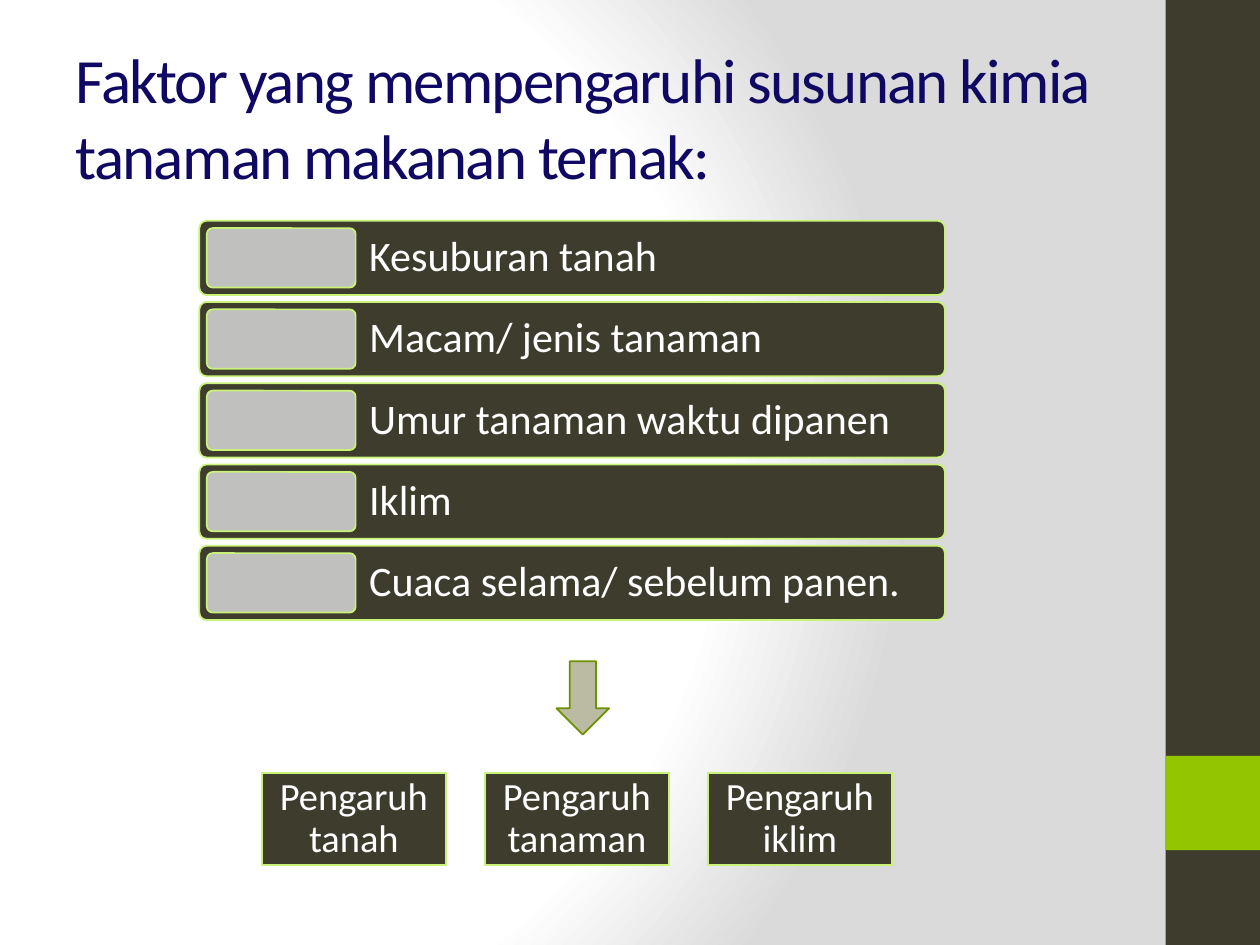
from dataclasses import dataclass

from pptx import Presentation
from pptx.dml.color import RGBColor
from pptx.enum.shapes import MSO_SHAPE
from pptx.enum.text import MSO_ANCHOR, PP_ALIGN
from pptx.oxml import parse_xml
from pptx.oxml.ns import nsdecls
from pptx.util import Cm, Pt

RECT, ROUNDED, DOWN_ARROW = MSO_SHAPE.RECTANGLE, MSO_SHAPE.ROUNDED_RECTANGLE, MSO_SHAPE.DOWN_ARROW
MIDDLE = MSO_ANCHOR.MIDDLE
LEFT, CENTER = PP_ALIGN.LEFT, PP_ALIGN.CENTER
TITLE_ONLY = 5


@dataclass(frozen=True)
class Theme:
    font: str = "Calibri"
    title_size: int = 36
    factor_size: int = 24
    effect_size: int = 22
    title: str = "0F0963"
    dark: str = "3E3D2D"
    accent: str = "94C600"
    outline: str = "CAF278"
    tab: str = "C0C0BE"
    arrow: str = "BBBAA2"
    arrow_line: str = "6D9200"
    text: str = "FFFFFF"
    page: str = "FFFFFF"
    page_edge: str = "DADADA"


THEME = Theme()
TITLE = "Faktor yang mempengaruhi susunan kimia tanaman makanan ternak:"
FACTORS = ["Kesuburan tanah", "Macam/ jenis tanaman", "Umur tanaman waktu dipanen",
           "Iklim", "Cuaca selama/ sebelum panen."]
EFFECTS = ["Pengaruh tanah", "Pengaruh tanaman", "Pengaruh iklim"]


def style_paragraph(p, size, color, align):
    p.alignment = align
    p.font.name = THEME.font
    p.font.size = Pt(size)
    p.font.color.rgb = RGBColor.from_string(color)


def add_block(s, kind, box, fill, line=None):
    """Add a flat preset shape; box is left, top, width, height in cm."""
    sp = s.shapes.add_shape(kind, *(Cm(v) for v in box))
    sp.shadow.inherit = False
    sp.fill.solid()
    sp.fill.fore_color.rgb = RGBColor.from_string(fill)
    if line:
        sp.line.color.rgb = RGBColor.from_string(line)
        sp.line.width = Pt(1)
    else:
        sp.line.fill.background()
    if kind == ROUNDED:
        sp.adjustments[0] = 0.1
    return sp


def write_label(sp, text, size, align, margin, left_margin):
    tf = sp.text_frame
    tf.word_wrap = True
    tf.vertical_anchor = MIDDLE
    tf.margin_top = tf.margin_bottom = tf.margin_right = Cm(margin)
    tf.margin_left = Cm(left_margin)
    p = tf.paragraphs[0]
    p.text = text
    p.line_spacing = 0.9
    style_paragraph(p, size, THEME.text, align)


def set_background(s):
    """Radial gradient, which python-pptx has no public method for."""
    stops = [(0, THEME.page), (75000, THEME.page), (100000, THEME.page_edge)]
    gs = "".join(f'<a:gs pos="{pos}"><a:srgbClr val="{c}"/></a:gs>' for pos, c in stops)
    s._element.cSld.insert(0, parse_xml(
        f'<p:bg {nsdecls("p", "a")}><p:bgPr><a:gradFill rotWithShape="1"><a:gsLst>{gs}</a:gsLst>'
        '<a:path path="circle"><a:fillToRect l="20000" t="50000" r="100000" b="50000"/></a:path>'
        '</a:gradFill><a:effectLst/></p:bgPr></p:bg>'))


def add_sidebar(s, left, top, width, height):
    add_block(s, RECT, (left, top, width, height), THEME.dark)
    add_block(s, RECT, (left, top + 0.8 * height, width, width), THEME.accent)


def set_title(s, left, top, width, height):
    sp = s.shapes.title
    sp.left, sp.top, sp.width, sp.height = Cm(left), Cm(top), Cm(width), Cm(height)
    tf = sp.text_frame
    tf.word_wrap = True
    tf.vertical_anchor = MIDDLE
    p = tf.paragraphs[0]
    r = p.add_run()
    r.text = TITLE
    style_paragraph(p, THEME.title_size, THEME.title, LEFT)
    r.font._element.set("spc", "-100")


def add_factors(s, left, top, width, height):
    """Stack one bar per factor, each with a blank tab at its left."""
    gap, inset, tab_width = 0.14, 0.15, 3
    bar = (height - gap * (len(FACTORS) - 1)) / len(FACTORS)
    for i, factor in enumerate(FACTORS):
        y = top + i * (bar + gap)
        sp = add_block(s, ROUNDED, (left, y, width, bar), THEME.dark, THEME.outline)
        write_label(sp, factor, THEME.factor_size, LEFT, 0.21, tab_width + 0.38)
        add_block(s, ROUNDED, (left + inset, y + inset, tab_width, bar - 2 * inset),
                  THEME.tab, THEME.outline)


def add_effects(s, left, top, width, height):
    """Spread the effect boxes evenly over the width."""
    box = 3.71
    step = (width - box) / (len(EFFECTS) - 1)
    for i, effect in enumerate(EFFECTS):
        sp = add_block(s, RECT, (left + i * step, top, box, height), THEME.dark, THEME.outline)
        write_label(sp, effect, THEME.effect_size, CENTER, 0.05, 0.05)


def main():
    prs = Presentation()
    prs.slide_width, prs.slide_height = Cm(25.4), Cm(19.05)
    s = prs.slides.add_slide(prs.slide_layouts[TITLE_ONLY])
    set_background(s)
    add_sidebar(s, 23.5, 0, 1.9, 19.05)
    set_title(s, 1.27, 0.76, 21.16, 3.18)
    add_factors(s, 4.02, 4.45, 15.03, 8.05)
    add_effects(s, 5.28, 15.59, 12.7, 1.85)
    add_block(s, DOWN_ARROW, (11.22, 13.33, 1.06, 1.48), THEME.arrow, THEME.arrow_line)
    prs.save("out.pptx")


if __name__ == "__main__":
    main()
